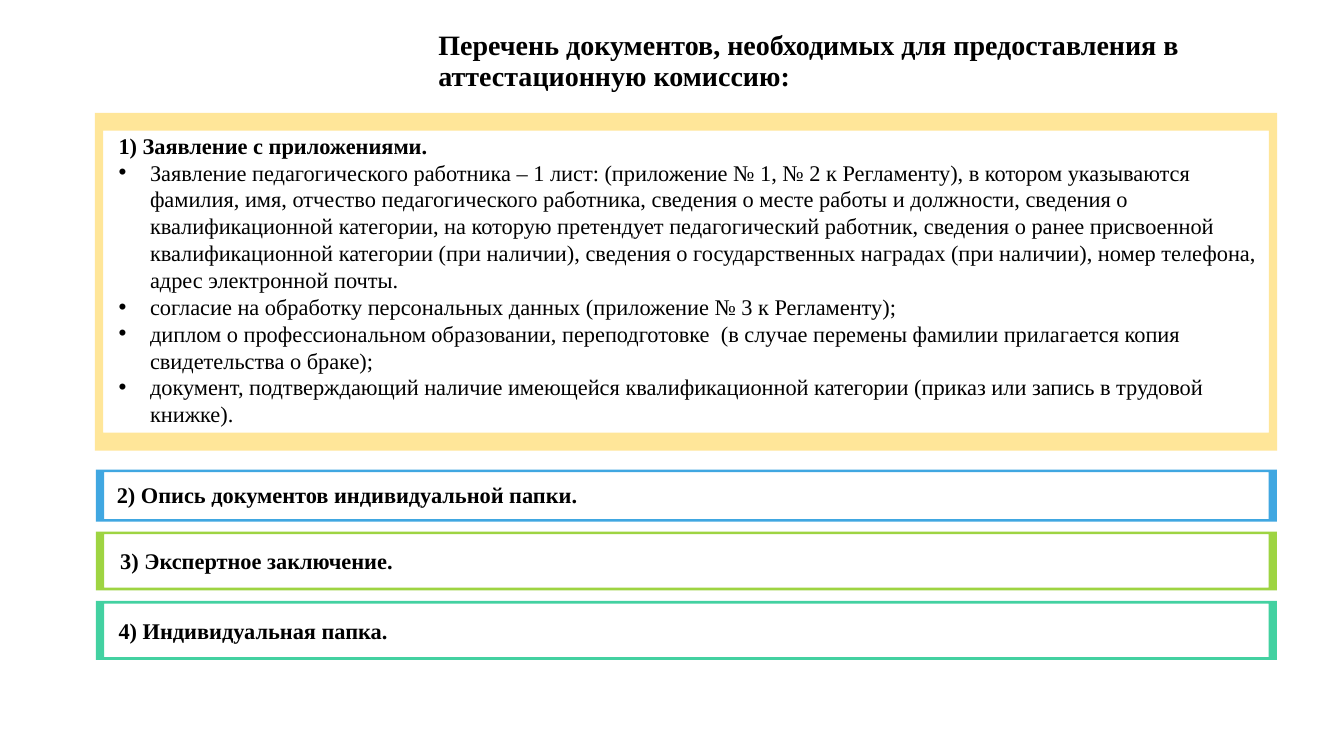
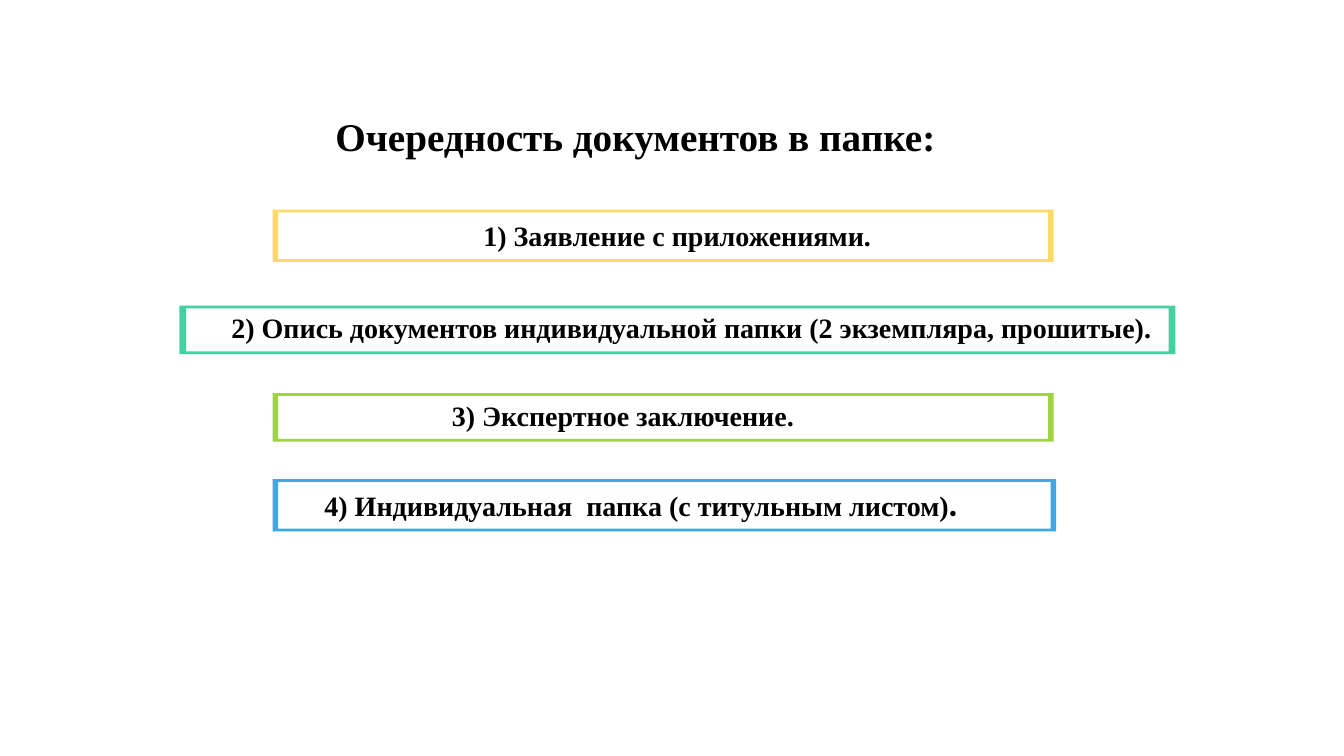
from dataclasses import dataclass

from lxml import etree
from pptx import Presentation
from pptx.dml.color import RGBColor
from pptx.enum.text import MSO_ANCHOR, PP_ALIGN
from pptx.oxml.ns import qn
from pptx.slide import Slide
from pptx.util import Pt

LEFT, CENTER = PP_ALIGN.LEFT, PP_ALIGN.CENTER
TOP, MIDDLE = MSO_ANCHOR.TOP, MSO_ANCHOR.MIDDLE

SERIF = "Times New Roman"
SANS = "Montserrat"
BLACK = "000000"
PALE_YELLOW = "FFE699"
YELLOW = "FFD966"
TEAL = "43D1A1"
GREEN = "9ED442"
BLUE = "40A7E1"
BULLET_INDENT = 22.5
THIN_BAR = 1.9


@dataclass(frozen=True)
class Box:
    left: float
    top: float
    width: float
    height: float


@dataclass(frozen=True)
class Line:
    text: str
    bold: bool = True
    bulleted: bool = False
    sans_ending: str = ""


@dataclass(frozen=True)
class Frame:
    box: Box
    color: str
    side: float
    bar: float = THIN_BAR


@dataclass(frozen=True)
class Item:
    frame: Frame
    lines: tuple[Line, ...]
    text_box: Box


def rgb(color: str) -> RGBColor:
    return RGBColor.from_string(color)


def add_bullet(paragraph) -> None:
    properties = paragraph._p.get_or_add_pPr()
    properties.set("marL", str(Pt(BULLET_INDENT)))
    properties.set("indent", str(-Pt(BULLET_INDENT)))
    etree.SubElement(properties, qn("a:buFont")).set("typeface", "Arial")
    etree.SubElement(properties, qn("a:buChar")).set("char", "•")


def add_text(slide: Slide, lines: tuple[Line, ...], box: Box, *, size: float,
             align: PP_ALIGN = LEFT, anchor: MSO_ANCHOR = TOP,
             spacing: float = 1.0, color: str = BLACK) -> None:
    frame = slide.shapes.add_textbox(
        Pt(box.left), Pt(box.top), Pt(box.width), Pt(box.height)).text_frame
    frame.word_wrap = True
    frame.vertical_anchor = anchor
    for index, line in enumerate(lines):
        paragraph = frame.add_paragraph() if index else frame.paragraphs[0]
        paragraph.alignment = align
        paragraph.line_spacing = spacing
        if line.bulleted:
            add_bullet(paragraph)
        for words, typeface in ((line.text, SERIF), (line.sans_ending, SANS)):
            if not words:
                continue
            run = paragraph.add_run()
            run.text = words
            run.font.name = typeface
            run.font.size = Pt(size)
            run.font.bold = line.bold
            run.font.color.rgb = rgb(color)


def add_frame(slide: Slide, frame: Frame) -> None:
    left, top = frame.box.left, frame.box.top
    right, bottom = left + frame.box.width, top + frame.box.height
    inner_left, inner_right = left + frame.side, right - frame.side
    inner_top, inner_bottom = top + frame.bar, bottom - frame.bar
    outline = slide.shapes.build_freeform(Pt(left), Pt(top))
    outline.add_line_segments(
        [(Pt(x), Pt(y)) for x, y in ((right, top), (right, bottom), (left, bottom))])
    outline.move_to(Pt(inner_left), Pt(inner_top))
    outline.add_line_segments(
        [(Pt(x), Pt(y)) for x, y in ((inner_left, inner_bottom),
                                     (inner_right, inner_bottom),
                                     (inner_right, inner_top))])
    border = outline.convert_to_shape()
    border.shadow.inherit = False
    border.fill.solid()
    border.fill.fore_color.rgb = rgb(frame.color)
    border.line.fill.background()


def add_title(slide: Slide, title: str, box: Box, *, size: float,
              anchor: MSO_ANCHOR) -> None:
    add_text(slide, (Line(title),), box, size=size, anchor=anchor, spacing=0.9)


def add_items(slide: Slide, items: tuple[Item, ...], *, size: float,
              align: PP_ALIGN) -> None:
    for item in items:
        add_frame(slide, item.frame)
        add_text(slide, item.lines, item.text_box, size=size, align=align)


APPLICATION = Line("1) Заявление с приложениями.")
EXPERT_OPINION = Line("3) Экспертное заключение.")

APPLICATION_PARTS = tuple(Line(text, bold=False, bulleted=True) for text in (
    "Заявление педагогического работника – 1 лист: (приложение № 1, № 2 к Регламенту), "
    "в котором указываются фамилия, имя, отчество педагогического работника, сведения "
    "о месте работы и должности, сведения о квалификационной категории, на которую "
    "претендует педагогический работник, сведения о ранее присвоенной квалификационной "
    "категории (при наличии), сведения о государственных наградах (при наличии), "
    "номер телефона, адрес электронной почты.",
    "согласие на обработку персональных данных (приложение № 3 к Регламенту);",
    "диплом о профессиональном образовании, переподготовке  (в случае перемены фамилии "
    "прилагается копия свидетельства о браке);",
    "документ, подтверждающий наличие имеющейся квалификационной категории "
    "(приказ или запись в трудовой книжке).",
))

REQUIRED_DOCUMENTS = (
    Item(Frame(Box(67.8, 80.6, 844.4, 241.2), PALE_YELLOW, 5.8, 12.8),
         (APPLICATION, *APPLICATION_PARTS), Box(77.6, 90.6, 833, 220.3)),
    Item(Frame(Box(68.5, 335.4, 843.5, 37.3), BLUE, 5.8),
         (Line("2) Опись документов индивидуальной папки."),),
         Box(76.3, 340, 350, 26.6)),
    Item(Frame(Box(68.5, 379.7, 843.5, 42), GREEN, 5.8),
         (EXPERT_OPINION,), Box(78.8, 387.3, 350, 26.6)),
    Item(Frame(Box(68.5, 429.3, 843.5, 42), TEAL, 5.8),
         (Line("4) Индивидуальная папка."),), Box(77.6, 437.2, 350, 26.6)),
)

FOLDER_ORDER = (
    Item(Frame(Box(194.8, 149.8, 557.8, 37.2), YELLOW, 3.9),
         (APPLICATION,), Box(275.8, 152.6, 416, 31.5)),
    Item(Frame(Box(128.1, 218.3, 711.5, 34.6), TEAL, 4.9),
         (Line("2) Опись документов индивидуальной папки (2 экземпляра, прошитые)."),),
         Box(150.5, 218.3, 687, 31.5)),
    Item(Frame(Box(194.8, 280.8, 557.8, 34.6), GREEN, 3.9),
         (EXPERT_OPINION,), Box(305, 280.9, 280, 31.5)),
    Item(Frame(Box(194.8, 342.3, 559.6, 37.3), BLUE, 3.9),
         (Line("4) Индивидуальная  папка (с титульным листом)", sans_ending="."),),
         Box(217.5, 345.4, 480, 31.5)),
)


def main() -> None:
    presentation = Presentation()
    presentation.slide_width, presentation.slide_height = Pt(960), Pt(540)
    blank = presentation.slide_layouts[6]

    required = presentation.slides.add_slide(blank)
    add_title(required, "Перечень документов, необходимых для предоставления "
              "в аттестационную комиссию:", Box(306, 18, 620.6, 52.6),
              size=20, anchor=MIDDLE)
    add_items(required, REQUIRED_DOCUMENTS, size=16, align=LEFT)

    order = presentation.slides.add_slide(blank)
    add_title(order, "Очередность документов в папке:", Box(232.5, 80.6, 469.5, 47.5),
              size=28, anchor=TOP)
    add_items(order, FOLDER_ORDER, size=20, align=CENTER)

    presentation.save("out.pptx")


if __name__ == "__main__":
    main()
